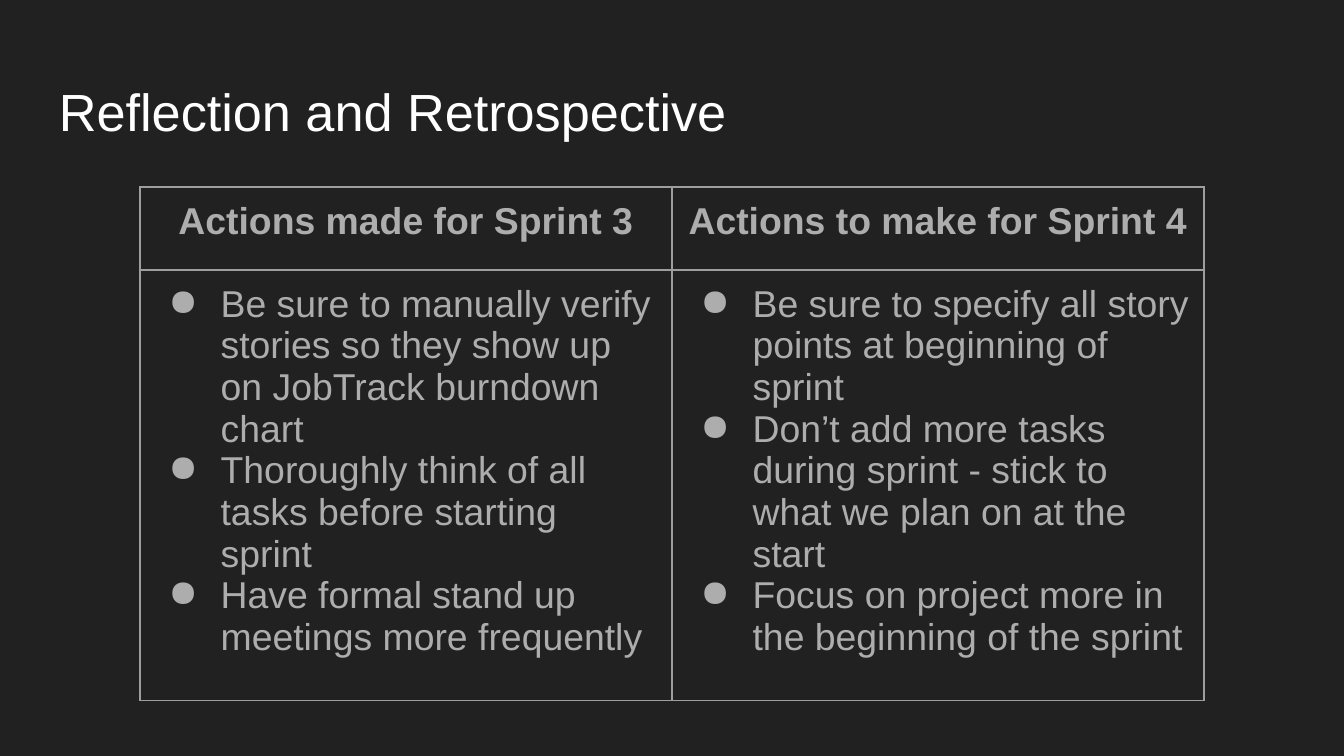
"""Build a sprint retrospective slide with a two-column action table."""
from dataclasses import dataclass

from lxml import etree
from pptx import Presentation
from pptx.dml.color import RGBColor
from pptx.enum import text
from pptx.oxml import ns
from pptx.util import Pt


@dataclass(frozen=True)
class Theme:
    background: RGBColor = RGBColor.from_string("212121")
    title: RGBColor = RGBColor.from_string("FFFFFF")
    body: RGBColor = RGBColor.from_string("ADADAD")
    border: RGBColor = RGBColor.from_string("9E9E9E")
    font: str = "Arial"
    title_size: int = 28
    body_size: int = 20


THEME = Theme()
INSET = Pt(7.2)
COLUMNS = {
    "Actions made for Sprint 3": [
        "Be sure to manually verify stories so they show up on JobTrack burndown chart",
        "Thoroughly think of all tasks before starting sprint",
        "Have formal stand up meetings more frequently",
    ],
    "Actions to make for Sprint 4": [
        "Be sure to specify all story points at beginning of sprint",
        "Don’t add more tasks during sprint - stick to what we plan on at the start",
        "Focus on project more in the beginning of the sprint",
    ],
}


def style_font(para, size, color, bold=False):
    para.font.name = THEME.font
    para.font.size = Pt(size)
    para.font.bold = bold
    para.font.color.rgb = color


def set_insets(holder):
    holder.margin_left = holder.margin_right = INSET
    holder.margin_top = holder.margin_bottom = INSET


def add_title(page, wording):
    box = page.shapes.add_textbox(Pt(24.5), Pt(35), Pt(671), Pt(45.4))
    frame = box.text_frame
    frame.word_wrap = True
    frame.vertical_anchor = text.MSO_ANCHOR.TOP
    set_insets(frame)
    para = frame.paragraphs[0]
    para.text = wording
    style_font(para, THEME.title_size, THEME.title)


def add_bullet(para):
    props = para._p.get_or_add_pPr()
    props.set("marL", str(Pt(36)))
    props.set("indent", str(Pt(-28)))
    color = etree.Element(ns.qn("a:buClr"))
    etree.SubElement(color, ns.qn("a:srgbClr"), val=str(THEME.body))
    mark = etree.Element(ns.qn("a:buChar"), char="●")
    props.insert(0, color)
    props.insert(1, mark)


def add_borders(cell):
    props = cell._tc.get_or_add_tcPr()
    for index, side in enumerate(("lnL", "lnR", "lnT", "lnB")):
        line = etree.Element(ns.qn(f"a:{side}"), w=str(Pt(0.75)))
        fill = etree.SubElement(line, ns.qn("a:solidFill"))
        etree.SubElement(fill, ns.qn("a:srgbClr"), val=str(THEME.border))
        props.insert(index, line)


def fill_cell(cell, lines, heading=False):
    cell.fill.background()
    set_insets(cell)
    add_borders(cell)
    cell.text = "\n".join(lines)
    for para in cell.text_frame.paragraphs:
        style_font(para, THEME.body_size, THEME.body, bold=heading)
        if heading:
            para.alignment = text.PP_ALIGN.CENTER
        else:
            add_bullet(para)


def add_action_table(page, columns):
    frame = page.shapes.add_table(2, len(columns), Pt(75), Pt(100.2), Pt(570), Pt(259.5))
    table = frame.table
    table.first_row = table.horz_banding = False
    table.rows[0].height = Pt(44.5)
    table.rows[1].height = Pt(215)
    for index, (heading, actions) in enumerate(columns.items()):
        table.columns[index].width = Pt(285)
        fill_cell(table.cell(0, index), [heading], heading=True)
        fill_cell(table.cell(1, index), actions)


def main():
    deck = Presentation()
    deck.slide_width, deck.slide_height = Pt(720), Pt(405)
    page = deck.slides.add_slide(deck.slide_layouts[6])
    page.background.fill.solid()
    page.background.fill.fore_color.rgb = THEME.background
    add_title(page, "Reflection and Retrospective")
    add_action_table(page, COLUMNS)
    deck.save("out.pptx")


if __name__ == "__main__":
    main()
